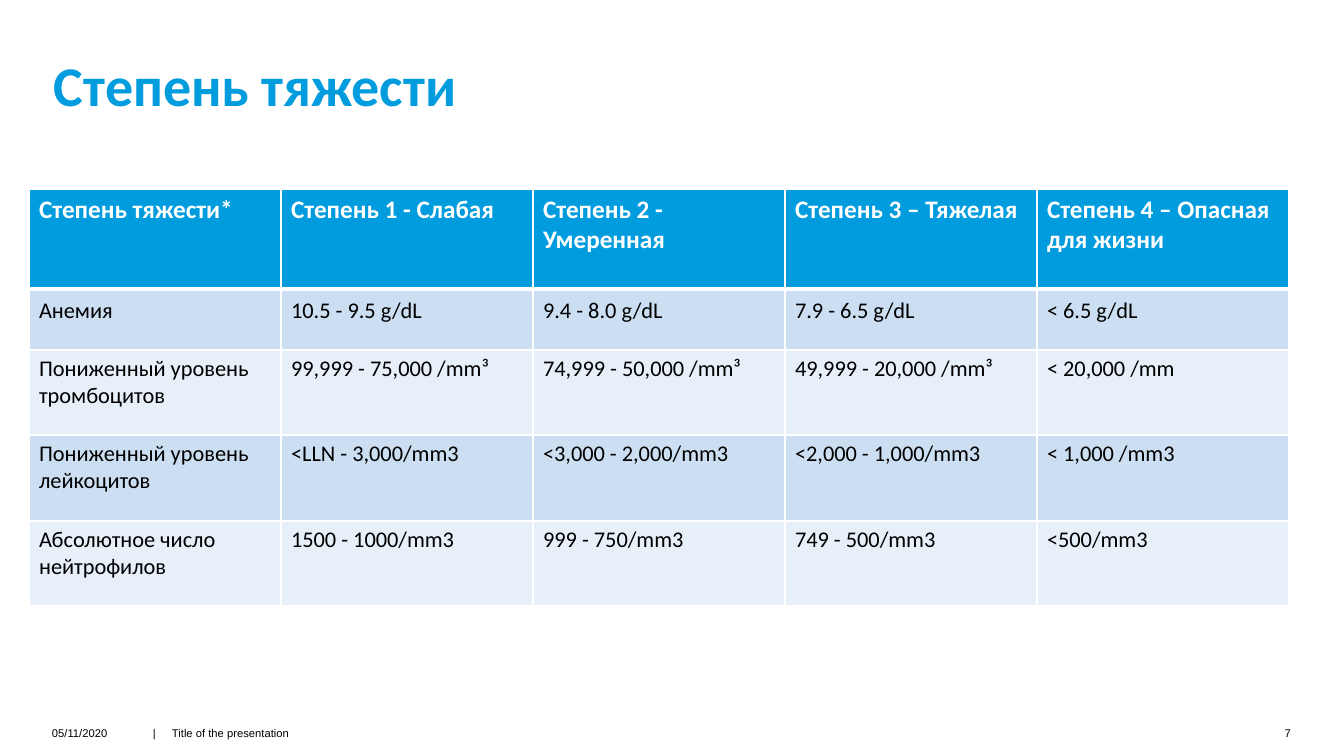
from pptx import Presentation
from pptx.dml.color import RGBColor
from pptx.enum.text import MSO_ANCHOR as Anchor, PP_ALIGN as Align
from pptx.oxml import parse_xml
from pptx.oxml.ns import nsdecls
from pptx.util import Emu, Pt

EMU_PER_PX = 9072
BLUE, WHITE, BLACK = "009CDE", "FFFFFF", "000000"
BANDS = ["CCDEF2", "E7EFF9"]
COLUMN_WIDTH = 252
ROW_HEIGHTS = [100, 61, 85, 86, 85]
SEVERITY_ROWS = [
    ["Степень тяжести*", "Степень 1 - Слабая", "Степень 2 - Умеренная",
     "Степень 3 – Тяжелая", "Степень 4 – Опасная для жизни"],
    ["Анемия", "10.5 - 9.5 g/dL", "9.4 - 8.0 g/dL", "7.9 - 6.5 g/dL", "< 6.5 g/dL"],
    ["Пониженный уровень тромбоцитов", "99,999 - 75,000 /mm³",
     "74,999 - 50,000 /mm³", "49,999 - 20,000 /mm³", "< 20,000 /mm"],
    ["Пониженный уровень лейкоцитов", "<LLN - 3,000/mm3", "<3,000 - 2,000/mm3",
     "<2,000 - 1,000/mm3", "< 1,000 /mm3"],
    ["Абсолютное число нейтрофилов", "1500 - 1000/mm3", "999 - 750/mm3",
     "749 - 500/mm3", "<500/mm3"],
]


def px(length):
    return Emu(length * EMU_PER_PX)


def color(hex_code):
    return RGBColor.from_string(hex_code)


def add_run(paragraph, text, size, font_name, hex_code, bold=False):
    run = paragraph.add_run()
    run.text = text
    font = run.font
    font.size, font.name, font.bold = Pt(size), font_name, bold
    font.color.rgb = color(hex_code)


def add_text_box(slide, left, top, width, height):
    """Add a wrapping text box without margins and return its text frame."""
    frame = slide.shapes.add_textbox(px(left), px(top), px(width), px(height)).text_frame
    frame.word_wrap = True
    frame.margin_left = frame.margin_top = frame.margin_right = frame.margin_bottom = 0
    return frame


def add_title(slide, text):
    frame = add_text_box(slide, 52, 39, 899, 80)
    frame.margin_left, frame.margin_right = px(2), px(39)
    frame.vertical_anchor = Anchor.BOTTOM
    paragraph = frame.paragraphs[0]
    paragraph.line_spacing = 0.9
    add_run(paragraph, text, 40, "Calibri", BLUE, bold=True)


def add_footer(slide, left, width, text, align=Align.LEFT, tab=None):
    paragraph = add_text_box(slide, left, 726, width, 20).paragraphs[0]
    if tab:
        paragraph._p.get_or_add_pPr().append(parse_xml(
            f'<a:tabLst {nsdecls("a")}><a:tab pos="{px(tab)}" algn="l"/></a:tabLst>'))
    paragraph.alignment = align
    add_run(paragraph, text, 8, "Arial", BLACK)


def set_borders(cell, top, bottom):
    """Draw white borders; top and bottom are widths in points."""
    properties = cell._tc.get_or_add_tcPr()
    widths = {"lnL": 1, "lnR": 1, "lnT": top, "lnB": bottom}
    for position, (tag, width) in enumerate(widths.items()):
        properties.insert(position, parse_xml(
            f'<a:{tag} {nsdecls("a")} w="{Pt(width)}"><a:solidFill>'
            f'<a:srgbClr val="{WHITE}"/></a:solidFill></a:{tag}>'))


def add_severity_table(slide, left, top):
    columns = len(SEVERITY_ROWS[0])
    table = slide.shapes.add_table(
        len(SEVERITY_ROWS), columns, px(left), px(top),
        px(COLUMN_WIDTH * columns), px(sum(ROW_HEIGHTS))).table
    for column in table.columns:
        column.width = px(COLUMN_WIDTH)
    for row_index, texts in enumerate(SEVERITY_ROWS):
        header = row_index == 0
        table.rows[row_index].height = px(ROW_HEIGHTS[row_index])
        for column_index, text in enumerate(texts):
            cell = table.cell(row_index, column_index)
            cell.fill.solid()
            cell.fill.fore_color.rgb = color(BLUE if header else BANDS[(row_index - 1) % 2])
            set_borders(cell, top=3 if row_index == 1 else 1, bottom=3 if header else 1)
            paragraph = cell.text_frame.paragraphs[0]
            if row_index == 1:
                paragraph.line_spacing = 1.1
                paragraph.space_after = Pt(6)
            add_run(paragraph, text, 18 if header else 16, "Calibri",
                    WHITE if header else BLACK, bold=header)


def main():
    presentation = Presentation()
    presentation.slide_width, presentation.slide_height = px(1344), px(756)
    slide = presentation.slides.add_slide(presentation.slide_layouts[6])
    add_footer(slide, 52, 87, "05/11/2020")
    add_footer(slide, 153, 250, "|\tTitle of the presentation", tab=19)
    add_footer(slide, 1259, 32, "7", align=Align.RIGHT)
    add_title(slide, "Степень тяжести")
    add_severity_table(slide, 29, 189)
    presentation.save("out.pptx")


if __name__ == "__main__":
    main()
